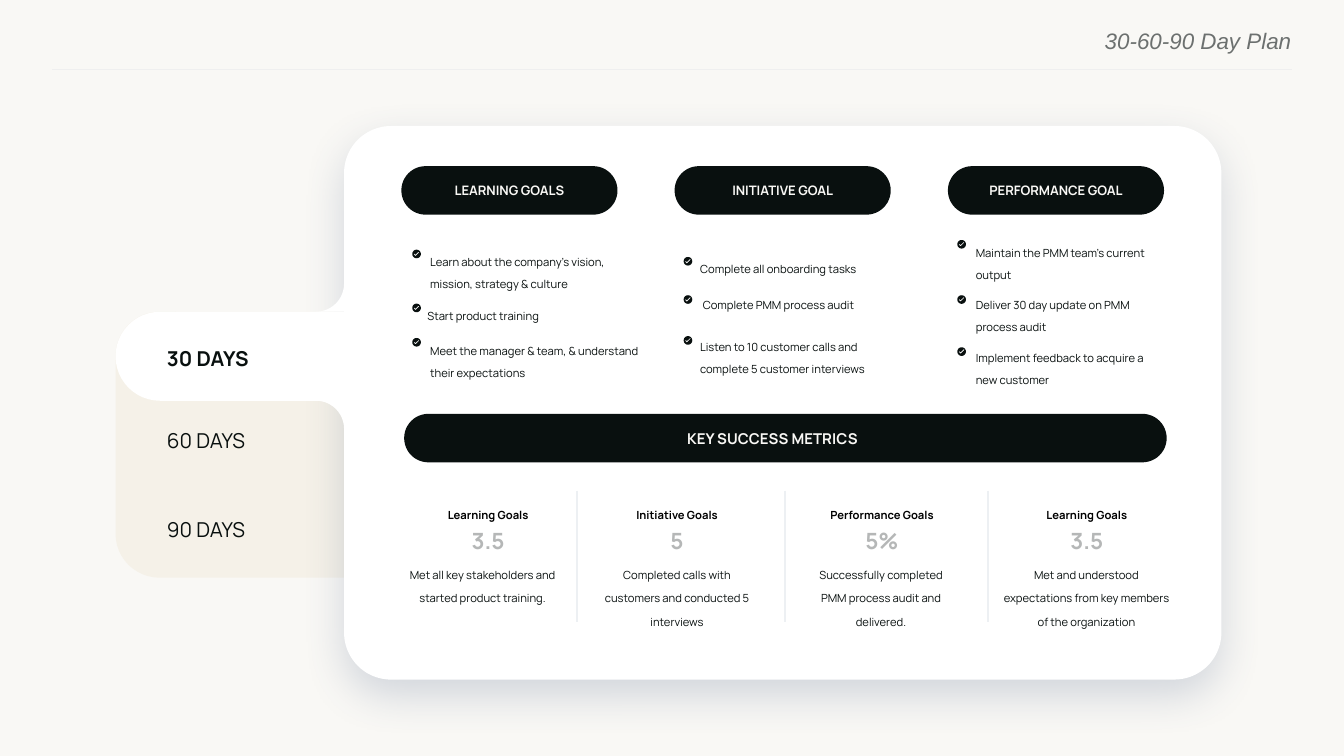
import math

import lxml.etree
import pptx
import pptx.dml.color
import pptx.enum.shapes
import pptx.enum.text
import pptx.oxml.ns
import pptx.util

Pt = pptx.util.Pt
SHAPE = pptx.enum.shapes.MSO_SHAPE
ALIGN = pptx.enum.text.PP_ALIGN
ANCHOR = pptx.enum.text.MSO_ANCHOR

COLORS = {
    "page": "F9F8F5", "rule": "EFEFEF", "cream": "F5F1E8", "white": "FFFFFF",
    "ink": "09100F", "black": "000000", "gray": "B5B7B7", "split": "EDF0F3",
    "title": "6C706F", "shade": "475D84",
}

# Each goal: text, box left, box top, box width, badge centre height
GOALS = [
    ("LEARNING GOALS", 223.2, [
        ("Learn about the company’s vision, mission, strategy & culture", 225.5, 129.6, 121.5, 136.1),
        ("Start product training", 224, 158.4, 121.5, 165),
        ("Meet the manager & team, & understand their expectations", 225.5, 177.1, 121.5, 183.4)]),
    ("INITIATIVE GOAL", 368.6, [
        ("Complete all onboarding tasks", 370.1, 133.2, 106, 140),
        ("Complete PMM process audit", 371.5, 152.6, 118, 160.5),
        ("Listen to 10 customer calls and complete 5 customer interviews", 370.1, 175, 116, 182.4)]),
    ("PERFORMANCE GOAL", 515.2, [
        ("Maintain the PMM team’s current output", 517.8, 124.6, 111, 130.9),
        ("Deliver 30 day update on PMM process audit", 517.8, 152.6, 106, 160.5),
        ("Implement feedback to acquire a new customer", 517.8, 180.7, 111, 188.4)]),
]

# Each metric: name, value, details, centre, details centre, details width
METRICS = [
    ("Learning Goals", "3.5", "Met all key stakeholders and started product training.", 261.5, 258.5, 92),
    ("Initiative Goals", "5", "Completed calls with customers and conducted 5 interviews", 362.7, 362.7, 89.3),
    ("Performance Goals", "5%", "Successfully completed PMM process audit and delivered.", 472.5, 472, 89.3),
    ("Learning Goals", "3.5", "Met and understood expectations from key members of the organization",
     582.2, 582, 103.7),
]


def color(name):
    return pptx.dml.color.RGBColor.from_string(COLORS[name])


def write(frame, text, size=6, ink="ink", bold=False, slant=False, font="Manrope",
          align=ALIGN.LEFT, lines=None, anchor=ANCHOR.TOP, inset=(5, 3, 5, 3)):
    """Put formatted text into a text frame."""
    frame.word_wrap = True
    frame.vertical_anchor = anchor
    (frame.margin_left, frame.margin_top,
     frame.margin_right, frame.margin_bottom) = map(Pt, inset)
    par = frame.paragraphs[0]
    par.alignment = align
    if lines:
        par.line_spacing = lines
    run = par.add_run()
    run.text = text
    run.font.name = font
    run.font.size = Pt(size)
    run.font.bold = bold
    run.font.italic = slant
    run.font.color.rgb = color(ink)


def label(slide, text, left, top, width, height, **style):
    box = slide.shapes.add_textbox(Pt(left), Pt(top), Pt(width), Pt(height))
    write(box.text_frame, text, **style)


def paint(shape, fill):
    shape.shadow.inherit = False
    shape.fill.solid()
    shape.fill.fore_color.rgb = color(fill)
    shape.line.fill.background()
    return shape


def block(slide, kind, left, top, width, height, fill, *adjust):
    shape = slide.shapes.add_shape(kind, Pt(left), Pt(top), Pt(width), Pt(height))
    for i, value in enumerate(adjust):
        shape.adjustments[i] = value
    return paint(shape, fill)


def tab(slide, left, top, width, height, fill, curve):
    """Draw a block with its two left corners rounded."""
    shape = block(slide, SHAPE.ROUND_2_SAME_RECTANGLE, left + (width - height) / 2,
                  top + (height - width) / 2, height, width, fill, curve, 0)
    shape.rotation = 270


def pill(slide, text, left, top, width, size, inset):
    shape = block(slide, SHAPE.ROUNDED_RECTANGLE, left, top, width, 26, "ink", 0.5)
    write(shape.text_frame, text, size=size, ink="page", bold=True,
          align=ALIGN.CENTER, anchor=ANCHOR.MIDDLE, inset=inset)


def rule(slide, x1, y1, x2, y2, ink, weight):
    line = slide.shapes.add_connector(pptx.enum.shapes.MSO_CONNECTOR.STRAIGHT,
                                      Pt(x1), Pt(y1), Pt(x2), Pt(y2))
    line.line.color.rgb = color(ink)
    line.line.width = Pt(weight)
    lxml.etree.SubElement(line._element.spPr, pptx.oxml.ns.qn("a:effectLst"))


def outline(slide, loops, fill):
    """Draw closed loops of points as one shape; inner loops are holes."""
    loops = [[(Pt(x), Pt(y)) for x, y in loop] for loop in loops]
    pen = slide.shapes.build_freeform(*loops[0][0])
    pen.add_line_segments(loops[0][1:])
    for loop in loops[1:]:
        pen.move_to(*loop[0])
        pen.add_line_segments(loop[1:])
    paint(pen.convert_to_shape(), fill)


def arc(x, y, radius, start, end, steps=24):
    turns = [math.radians(start + (end - start) * i / steps) for i in range(steps + 1)]
    return [(x + radius * math.cos(t), y + radius * math.sin(t)) for t in turns]


def badge(slide, x, y, radius=2.3):
    tick = [(-0.25, 0.5), (-0.65, 0.1), (-0.5, -0.1), (-0.25, 0.15), (0.5, -0.55), (0.65, -0.4)]
    hole = [(x + radius * a, y + radius * b) for a, b in tick]
    outline(slide, [arc(x, y, radius, 0, 360), hole], "ink")


def panel(slide):
    shape = block(slide, SHAPE.ROUNDED_RECTANGLE, 184.3, 67.5, 470, 296.6, "white", 0.085)
    effects = shape._element.spPr.find(pptx.oxml.ns.qn("a:effectLst"))
    shade = lxml.etree.SubElement(effects, pptx.oxml.ns.qn("a:outerShdw"), blurRad=str(Pt(23)),
                                  dist=str(Pt(8.7)), dir="5400000", algn="bl", rotWithShape="0")
    tint = lxml.etree.SubElement(shade, pptx.oxml.ns.qn("a:srgbClr"), val=COLORS["shade"])
    lxml.etree.SubElement(tint, pptx.oxml.ns.qn("a:alpha"), val="22000")


def days(slide):
    tab(slide, 61.9, 167, 122.4, 142.5, "cream", 0.193)
    panel(slide)
    edge, bend = 184.3, 15
    for corner, center, end in ((167, 167 - bend, 0), (214.7, 214.7 + bend, 0)):
        start = 90 if center < corner else -90
        curve = arc(edge - bend, center, bend, start, end)
        outline(slide, [[(edge, corner)] + curve], "white")
    tab(slide, 61.9, 167, 122.4, 47.7, "white", 0.5)
    for text, top, bold in (("30 DAYS", 182.2, True), ("60 DAYS", 226.2, False),
                            ("90 DAYS", 273.8, False)):
        label(slide, text, 84.5, top, 100, 18, size=11, bold=bold)


def goals(slide):
    for i, (name, mark, items) in enumerate(GOALS):
        pill(slide, name, 215 + 146.4 * i, 89, 115.8, 7, (3, 0, 3, 0))
        for text, left, top, width, height in items:
            badge(slide, mark, height)
            label(slide, text, left, top, width, 24.5, lines=1.62)


def metrics(slide):
    pill(slide, "KEY SUCCESS METRICS", 216.5, 221.7, 408.5, 8, (0, 0, 13.7, 0))
    for name, value, text, mid, center, width in METRICS:
        label(slide, name, mid - 36, 259.2, 72, 18, ink="black", bold=True,
              align=ALIGN.CENTER, lines=2.38)
        label(slide, text, center - width / 2, 296, width, 40, align=ALIGN.CENTER, lines=1.75)
        label(slide, value, mid - 18, 276.9, 36, 20, size=12, ink="gray", bold=True,
              align=ALIGN.CENTER, lines=1.19)
    for x in (309.3, 420.6, 529.2):
        rule(slide, x, 262.8, x, 333.4, "split", 1)


def heading(slide, text):
    title = slide.shapes.title
    title.left, title.top, title.width, title.height = Pt(354.2), Pt(14.4), Pt(337.7), Pt(13)
    write(title.text_frame, text, size=12, ink="title", slant=True, font="Arial",
          align=ALIGN.RIGHT, inset=(0, 0, 0, 0))


def main():
    deck = pptx.Presentation()
    deck.slide_width, deck.slide_height = Pt(720), Pt(405)
    slide = deck.slides.add_slide(deck.slide_layouts.get_by_name("Title Only"))
    slide.background.fill.solid()
    slide.background.fill.fore_color.rgb = color("page")
    rule(slide, 28, 37.2, 692, 37.2, "rule", 0.75)
    days(slide)
    goals(slide)
    metrics(slide)
    heading(slide, "30-60-90 Day Plan")
    deck.save("out.pptx")


if __name__ == "__main__":
    main()
